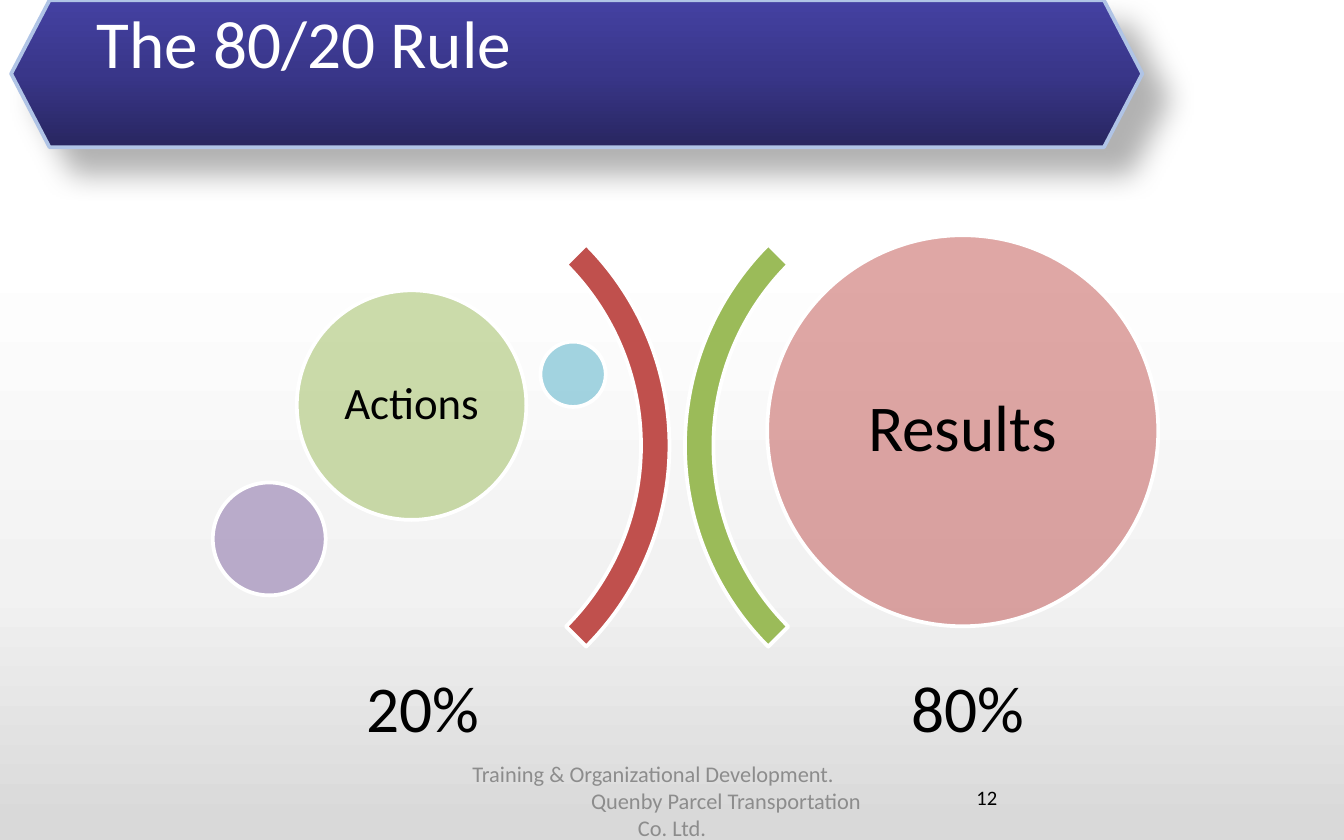
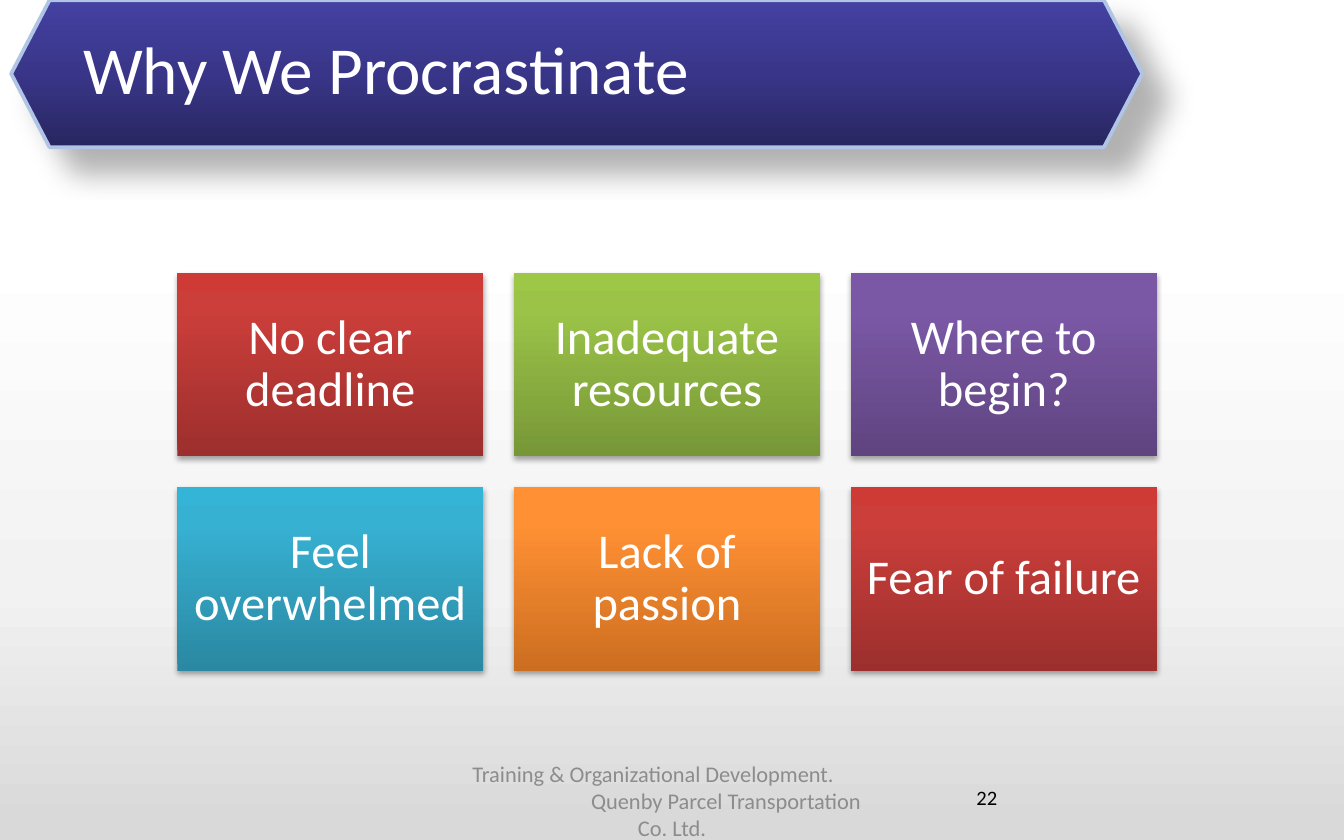
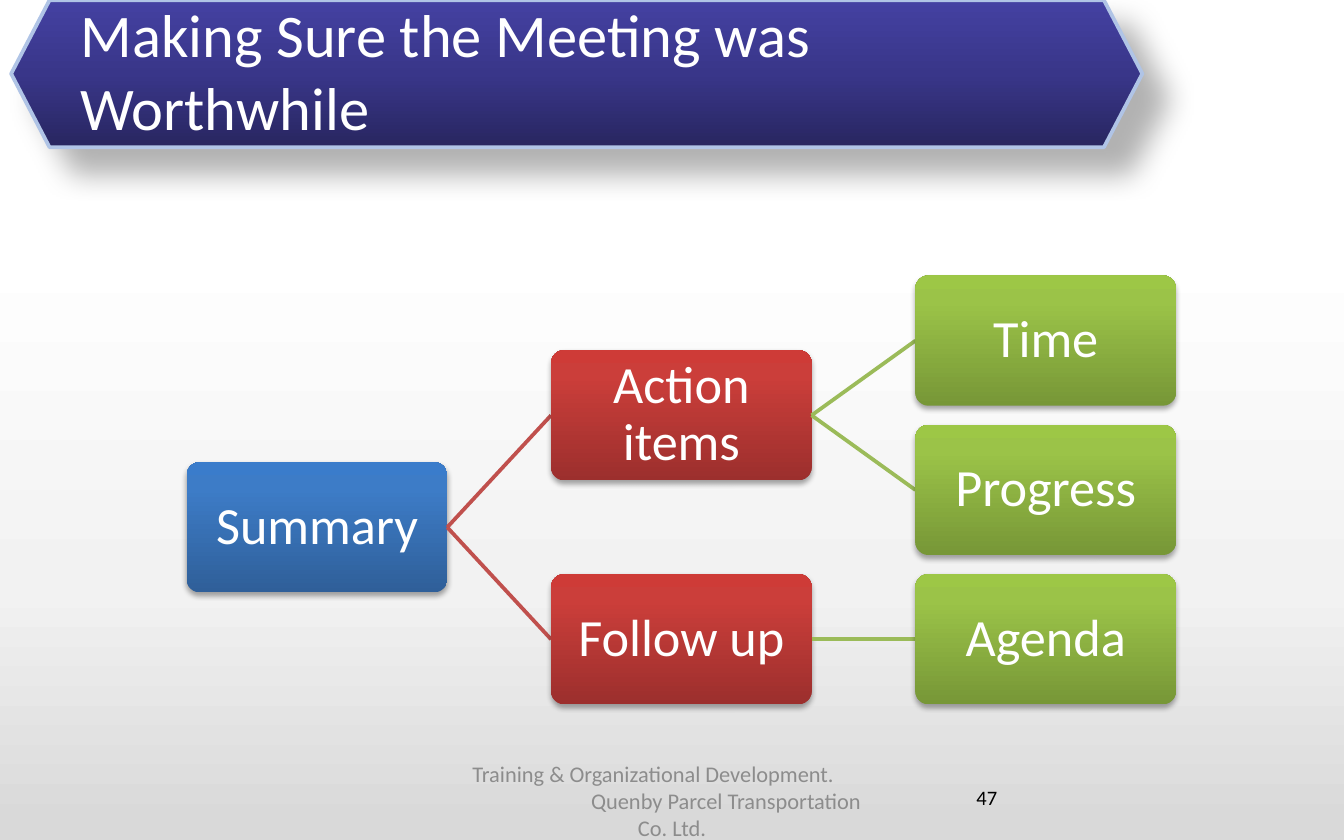
"""Build three time-management slides: a ratio diagram, a tile grid and a tree."""
from lxml import etree
from pptx import Presentation
from pptx.dml.color import RGBColor
from pptx.enum.shapes import MSO_CONNECTOR, MSO_SHAPE
from pptx.enum.text import MSO_ANCHOR, MSO_AUTO_SIZE, PP_ALIGN
from pptx.oxml.ns import qn
from pptx.util import Pt

FONT = "Calibri"
LEFT, CENTER = PP_ALIGN.LEFT, PP_ALIGN.CENTER
TOP, MIDDLE = MSO_ANCHOR.TOP, MSO_ANCHOR.MIDDLE
NO_FIT = MSO_AUTO_SIZE.NONE
HEXAGON, ARC, OVAL = MSO_SHAPE.HEXAGON, MSO_SHAPE.BLOCK_ARC, MSO_SHAPE.OVAL
RECT, ROUNDED = MSO_SHAPE.RECTANGLE, MSO_SHAPE.ROUNDED_RECTANGLE
STRAIGHT = MSO_CONNECTOR.STRAIGHT

WHITE = RGBColor(0xFF, 0xFF, 0xFF)
BLACK = RGBColor(0x00, 0x00, 0x00)
GRAY = RGBColor(0x8C, 0x8C, 0x8C)
BAND_EDGE = RGBColor(0xB0, 0xC4, 0xE6)
RED = RGBColor(0xC0, 0x50, 0x4D)
GREEN = RGBColor(0x9B, 0xBB, 0x59)
PURPLE = RGBColor(0x80, 0x64, 0xA2)
AQUA = RGBColor(0x4B, 0xAC, 0xC6)


def stops(positions, *colors):
    """Pair gradient positions in percent with colours."""
    return list(zip(positions, [RGBColor.from_string(c) for c in colors]))


TILE_STOPS = (0, 80, 100)
BACKDROP = stops((2, 30, 71), "D9D9D9", "F2F2F2", "FFFFFF")
BAND = stops((0, 50, 100), "282660", "393689", "4441A2")
BLUE_TILE = stops(TILE_STOPS, "2F5F99", "3D7CC7", "3A7CCB")
RED_TILE = stops(TILE_STOPS, "9C2F2D", "CB3E3A", "CE3B37")
GREEN_TILE = stops(TILE_STOPS, "779737", "9BC348", "9DC746")
PURPLE_TILE = stops(TILE_STOPS, "5F4480", "7B58A6", "7C57A8")
AQUA_TILE = stops(TILE_STOPS, "2A88A2", "37B1D2", "34B4D6")
ORANGE_TILE = stops(TILE_STOPS, "CC6E20", "FF9034", "FF9136")

BAND_SHADOW = (30, 15, 18, 45)
TILE_SHADOW = (35, 3.1, 1.8, 90)


def add_color(parent, color, alpha=None):
    """Append an sRGB colour, with an optional opacity in percent."""
    clr = etree.SubElement(parent, qn("a:srgbClr"), val=str(color))
    if alpha is not None:
        etree.SubElement(clr, qn("a:alpha"), val=str(alpha * 1000))


def set_gradient(fill, element, gradient):
    """Fill with a vertical gradient that starts at the bottom."""
    fill.gradient()
    fill.gradient_angle = 90
    gs_list = next(element.iter(qn("a:gsLst")))
    for gs in list(gs_list):
        gs_list.remove(gs)
    for position, color in gradient:
        gs = etree.SubElement(gs_list, qn("a:gs"), pos=str(position * 1000))
        add_color(gs, color)


def set_shadow(sp, alpha, blur, distance, angle):
    """Give a shape an outer shadow."""
    effects = sp._element.spPr.find(qn("a:effectLst"))
    shadow = etree.SubElement(effects, qn("a:outerShdw"), blurRad=str(Pt(blur)),
                              dist=str(Pt(distance)), dir=str(angle * 60000),
                              algn="ctr", rotWithShape="0")
    add_color(shadow, BLACK, alpha)


def write(tf, *lines, size, color=WHITE, align=CENTER, anchor=MIDDLE,
          inset=None, spacing=None):
    """Write paragraphs into a text frame with one format."""
    tf.word_wrap = True
    tf.auto_size = NO_FIT
    tf.vertical_anchor = anchor
    if inset is not None:
        tf.margin_left = tf.margin_right = Pt(inset)
        tf.margin_top = tf.margin_bottom = Pt(inset)
    for i, line in enumerate(lines):
        p = tf.add_paragraph() if i else tf.paragraphs[0]
        p.alignment = align
        if spacing:
            p.line_spacing = spacing
        r = p.add_run()
        r.text = line
        r.font.name, r.font.size, r.font.color.rgb = FONT, Pt(size), color


def add_text(slide, text, x, y, w, h, **fmt):
    """Add a text box."""
    tb = slide.shapes.add_textbox(Pt(x), Pt(y), Pt(w), Pt(h))
    write(tb.text_frame, text, **fmt)
    return tb


def add_shape(slide, kind, x, y, w, h, fill, alpha=None, line=None,
              shadow=None, adjust=(), rotation=0):
    """Add a preset shape with a plain or gradient fill."""
    sp = slide.shapes.add_shape(kind, Pt(x), Pt(y), Pt(w), Pt(h))
    sp.rotation = rotation
    for i, value in enumerate(adjust):
        sp.adjustments[i] = value
    sp.shadow.inherit = False
    if shadow:
        set_shadow(sp, *shadow)
    if isinstance(fill, list):
        set_gradient(sp.fill, sp._element.spPr, fill)
    else:
        sp.fill.solid()
        sp.fill.fore_color.rgb = fill
        if alpha is not None:
            clr = next(sp._element.spPr.iter(qn("a:srgbClr")))
            etree.SubElement(clr, qn("a:alpha"), val=str(alpha * 1000))
    if line is None:
        sp.line.fill.background()
    else:
        sp.line.color.rgb = line
        sp.line.width = Pt(2)
    return sp


def add_circle(slide, x, y, size, color, text=None, text_size=None):
    """Add a half-transparent circle with an optional label."""
    sp = add_shape(slide, OVAL, x, y, size, size, color, alpha=50, line=WHITE)
    if text:
        write(sp.text_frame, text, size=text_size, color=BLACK, inset=0, spacing=0.9)


def add_tile(slide, kind, text, x, y, w, h, gradient, size, inset, adjust=()):
    """Add a labelled gradient tile with a soft shadow."""
    sp = add_shape(slide, kind, x, y, w, h, gradient, shadow=TILE_SHADOW, adjust=adjust)
    write(sp.text_frame, text, size=size, inset=inset, spacing=0.9)


def add_line(slide, x1, y1, x2, y2, color):
    """Add a straight connector without a shadow."""
    cn = slide.shapes.add_connector(STRAIGHT, Pt(x1), Pt(y1), Pt(x2), Pt(y2))
    cn.line.color.rgb = color
    cn.line.width = Pt(2)
    etree.SubElement(cn._element.spPr, qn("a:effectLst"))


def style_layout(prs, layout):
    """Put the backdrop and the title band on the layout."""
    set_gradient(layout.background.fill, layout.element, BACKDROP)
    slide = prs.slides.add_slide(layout)
    band = add_shape(slide, HEXAGON, 6, 0, 606, 79, BAND, line=BAND_EDGE,
                     shadow=BAND_SHADOW, adjust=(0.26, 1.15))
    layout.shapes._spTree.insert(2, band._element)
    return slide


def add_frame(slide, title, number, x, y, w=648, size=36):
    """Add the title, the footer and the slide number."""
    sp = slide.shapes.title
    sp.left, sp.top, sp.width, sp.height = Pt(x), Pt(y), Pt(w), Pt(75)
    write(sp.text_frame, title, size=size, align=LEFT)
    tb = slide.shapes.add_textbox(Pt(246), Pt(417), Pt(228), Pt(24))
    write(tb.text_frame, "Training & Organizational Development.",
          "Quenby Parcel Transportation Co. Ltd.", size=12, color=GRAY)
    first, second = tb.text_frame.paragraphs
    first.alignment = LEFT
    second._p.get_or_add_pPr().set("indent", str(Pt(58)))
    add_text(slide, number, 516, 417, 168, 24, size=11, color=BLACK,
             align=LEFT, anchor=TOP)


def build_ratio(slide):
    """Show few actions balanced against many results."""
    add_frame(slide, "The 80/20 Rule", "12", 44.6, -15)
    for x, rotation, color in ((54, 90, RED), (367, 270, GREEN)):
        add_shape(slide, ARC, x, 86.4, 304.6, 304.6, color, line=WHITE,
                  adjust=(135, 189, 0.05), rotation=rotation)
    add_circle(slide, 411, 126, 209.5, RED, "Results", 35)
    add_circle(slide, 159, 155.5, 123, GREEN, "Actions", 24)
    add_circle(slide, 114, 258.5, 60.5, PURPLE)
    add_circle(slide, 289.5, 183, 35, AQUA)
    for text, x in (("20%", 111), ("80%", 403)):
        add_text(slide, text, x, 350.6, 231, 61, size=35, color=BLACK,
                 inset=10.8, spacing=0.9)


def build_reasons(slide):
    """Show the reasons as a grid of three columns."""
    add_frame(slide, "Why We Procrastinate", "22", 37.4, -1.4)
    reasons = (("No clear deadline", RED_TILE), ("Inadequate resources", GREEN_TILE),
               ("Where to begin?", PURPLE_TILE), ("Feel overwhelmed", AQUA_TILE),
               ("Lack of passion", ORANGE_TILE), ("Fear of failure", RED_TILE))
    for i, (text, gradient) in enumerate(reasons):
        row, col = divmod(i, 3)
        add_tile(slide, RECT, text, 95 + col * 180.4, 146 + row * 114.8,
                 164, 98.5, gradient, 26, 7.5)


def build_tree(slide):
    """Show the meeting follow-up as a tree that grows to the right."""
    add_frame(slide, "Making Sure the Meeting was Worthwhile", "47", 36, 0, 531, 32.4)
    w, h = 139.6, 69.8
    levels = ((BLUE_TILE, None), (RED_TILE, RED), (GREEN_TILE, GREEN))
    nodes = (("Summary", 0, 1.25, None), ("Action items", 1, 0.5, "Summary"),
             ("Time", 2, 0, "Action items"), ("Progress", 2, 1, "Action items"),
             ("Follow up", 1, 2, "Summary"), ("Agenda", 2, 2, "Follow up"))
    places = {}
    for text, level, row, parent in nodes:
        x, y = 100 + level * 195.2, 147.6 + row * 80
        places[text] = x, y
        gradient, line_color = levels[level]
        if parent:
            px, py = places[parent]
            add_line(slide, px + w, py + h / 2, x, y + h / 2, line_color)
        add_tile(slide, ROUNDED, text, x, y, w, h, gradient, 28, 1.5, adjust=(0.1,))


def main():
    """Build and save the presentation."""
    prs = Presentation()
    prs.slide_width, prs.slide_height = Pt(720), Pt(450)
    layout = prs.slide_layouts[5]
    build_ratio(style_layout(prs, layout))
    for build in (build_reasons, build_tree):
        build(prs.slides.add_slide(layout))
    prs.save("out.pptx")


if __name__ == "__main__":
    main()
